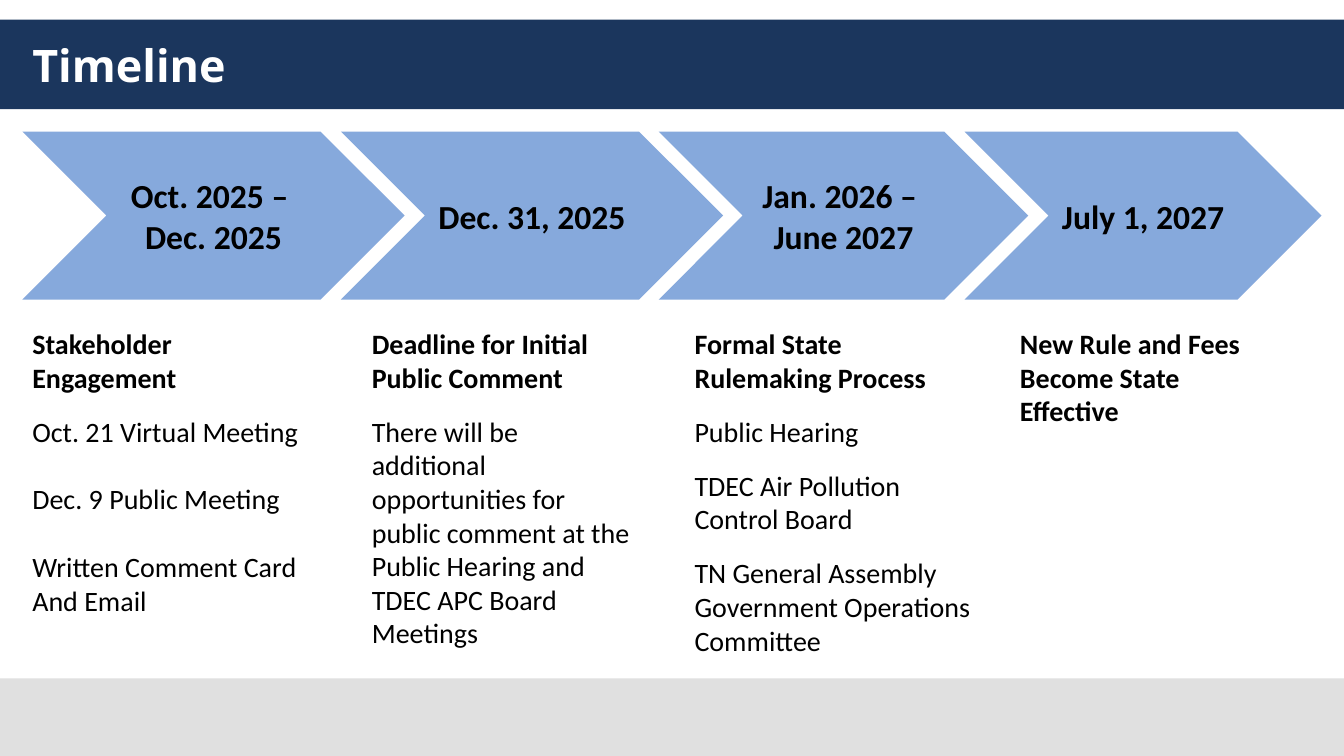
"""Build the rulemaking timeline slide."""
from dataclasses import dataclass

from pptx import Presentation
from pptx.dml.color import RGBColor
from pptx.enum.shapes import MSO_SHAPE
from pptx.enum.text import MSO_ANCHOR, PP_ALIGN
from pptx.util import Pt


@dataclass(frozen=True)
class Theme:
    navy: RGBColor = RGBColor(0x1B, 0x36, 0x5D)
    footer: RGBColor = RGBColor(0xE0, 0xE0, 0xE0)
    arrow: RGBColor = RGBColor(0x86, 0xA9, 0xDC)
    ink: RGBColor = RGBColor(0, 0, 0)
    white: RGBColor = RGBColor(0xFF, 0xFF, 0xFF)
    title_size: Pt = Pt(32)
    date_size: Pt = Pt(24)
    body_size: Pt = Pt(20)


theme = Theme()
title_format = {"name": "Open Sans", "size": theme.title_size, "bold": True}
date_format = {"name": "Calibri", "size": theme.date_size, "bold": True}
heading_format = {"name": "Calibri", "size": theme.body_size, "bold": True}
detail_format = {**heading_format, "bold": False}


def add_block(kind, left, top, width, height, color):
    block = slide.shapes.add_shape(kind, Pt(left), Pt(top), Pt(width), Pt(height))
    block.shadow.inherit = False
    block.fill.solid()
    block.fill.fore_color.rgb = color
    block.line.fill.background()
    return block


def write_lines(frame, lines, color, anchor=MSO_ANCHOR.TOP, align=PP_ALIGN.LEFT):
    frame.word_wrap = True
    frame.vertical_anchor = anchor
    for index, (text, gap, font_format) in enumerate(lines):
        paragraph = frame.add_paragraph() if index else frame.paragraphs[0]
        paragraph.alignment = align
        if gap:
            paragraph.space_before = Pt(gap)
        run = paragraph.add_run()
        run.text = text
        for attribute, value in font_format.items():
            setattr(run.font, attribute, value)
        run.font.color.rgb = color


deck = Presentation()
deck.slide_width, deck.slide_height = Pt(960), Pt(540)
slide = deck.slides.add_slide(deck.slide_layouts[6])

add_block(MSO_SHAPE.RECTANGLE, 0, 14, 960, 64, theme.navy)
add_block(MSO_SHAPE.RECTANGLE, 0, 484.5, 960, 55.5, theme.footer)
title = slide.shapes.add_textbox(Pt(16), Pt(14), Pt(928), Pt(64.5))
write_lines(title.text_frame, [("Timeline", 0, title_format)],
            theme.white, MSO_ANCHOR.MIDDLE)

phases = [
    (16, 273, ["Oct. 2025 – ", "Dec. 2025"]),
    (243.5, 273, ["Dec. 31, 2025"]),
    (470.5, 264, ["Jan. 2026 – ", "June 2027"]),
    (689, 255, ["July 1, 2027"]),
]
for left, width, dates in phases:
    phase = add_block(MSO_SHAPE.CHEVRON, left, 94, width, 120, theme.arrow)
    write_lines(phase.text_frame, [(date, 0, date_format) for date in dates],
                theme.ink, MSO_ANCHOR.MIDDLE, PP_ALIGN.CENTER)

small_gap, line_gap = 14.6, 24.4
steps = [
    (16, 214.5, 216, "Stakeholder Engagement", [
        ("Oct. 21 Virtual Meeting", small_gap),
        ("Dec. 9 Public Meeting", line_gap),
        ("Written Comment Card", line_gap),
        ("And Email", 0),
    ]),
    (258.5, 203, 240, "Deadline for Initial Public Comment", [
        ("There will be additional opportunities for public comment at the "
         "Public Hearing and TDEC APC Board Meetings", small_gap),
    ]),
    (489, 218, 254, "Formal State Rulemaking Process", [
        ("Public Hearing", small_gap),
        ("TDEC Air Pollution Control Board", small_gap),
        ("TN General Assembly Government Operations Committee", small_gap),
    ]),
    (721.5, 185, 80, "New Rule and Fees Become State Effective", []),
]
for left, width, height, heading, details in steps:
    step = slide.shapes.add_textbox(Pt(left), Pt(229.7), Pt(width), Pt(height))
    lines = [(heading, 0, heading_format)]
    lines += [(text, gap, detail_format) for text, gap in details]
    write_lines(step.text_frame, lines, theme.ink)

deck.save("out.pptx")
